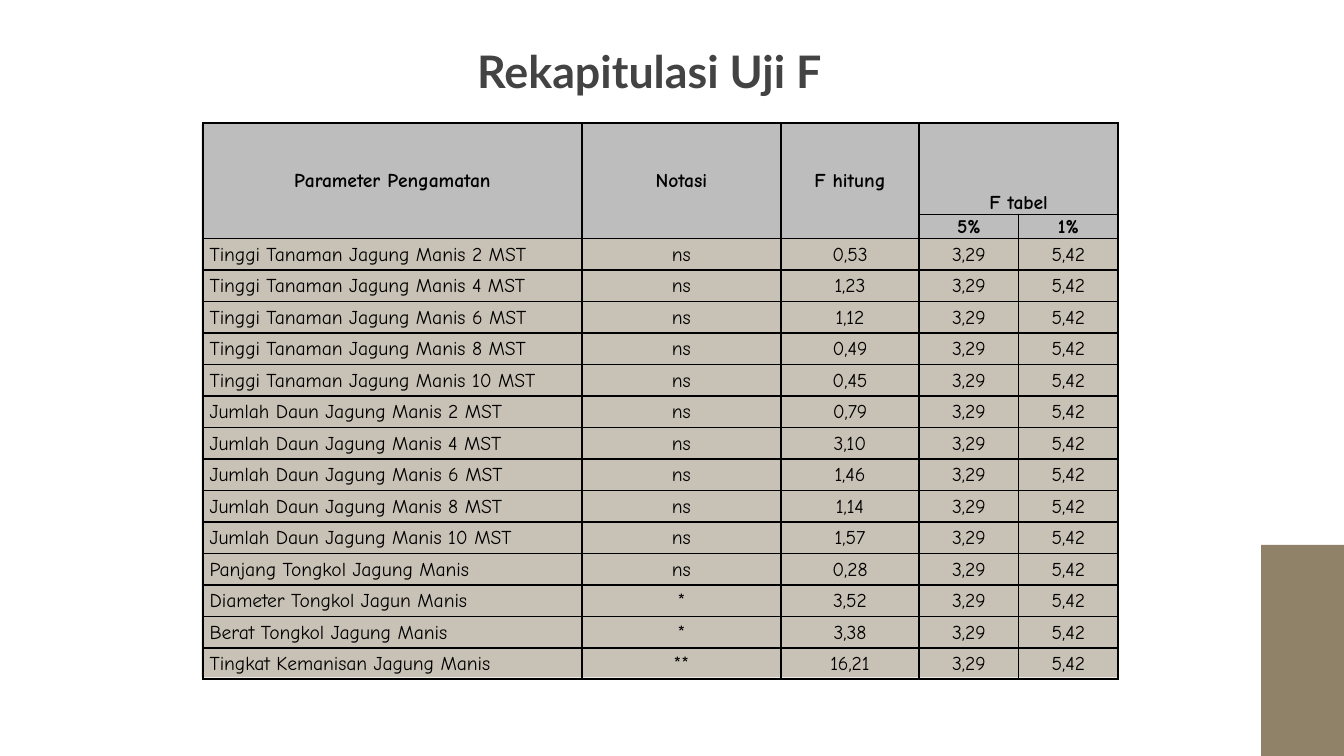
from lxml import etree
from pptx import Presentation, util as u
from pptx.dml.color import RGBColor
from pptx.enum import shapes, text
from pptx.oxml import ns

BLACK = RGBColor(0x00, 0x00, 0x00)
INK = RGBColor(0x43, 0x43, 0x43)
GREY = RGBColor(0xBD, 0xBD, 0xBD)
TAN = RGBColor(0x90, 0x82, 0x69)
MID = text.PP_ALIGN.CENTER
LEFT = text.PP_ALIGN.LEFT

HEADS = ["Parameter Pengamatan", "Notasi", "F hitung"]
LEVELS = {"5%": "3,29", "1%": "5,42"}
WEEKS = (2, 4, 6, 8, 10)
TRAITS = [f"{part} Jagung Manis {week} MST"
          for part in ("Tinggi Tanaman", "Jumlah Daun") for week in WEEKS]
TRAITS += ["Panjang Tongkol Jagung Manis", "Diameter Tongkol Jagun Manis",
           "Berat Tongkol Jagung Manis", "Tingkat Kemanisan Jagung Manis"]
MARKS = ["ns"] * 11 + ["*", "*", "**"]
SCORES = ["0,53", "1,23", "1,12", "0,49", "0,45", "0,79", "3,10", "1,46",
          "1,14", "1,57", "0,28", "3,52", "3,38", "16,21"]


class Deck:
    UNIT = u.Inches(0.1)
    HEAD = "Lato"
    BODY = "Comic Neue"

    def __init__(self, cols, rows):
        self.prs = Presentation()
        self.prs.slide_width = self.size(cols)
        self.prs.slide_height = self.size(rows)
        self.slide = self.prs.slides.add_slide(self.prs.slide_layouts[5])

    def size(self, count):
        return u.Emu(round(count * self.UNIT))

    def box(self, *spans):
        return [self.size(span) for span in spans]

    def run(self, para, words, font, points, color, bold):
        run = para.add_run()
        run.text = words
        run.font.name = font
        run.font.size = u.Pt(points)
        run.font.bold = bold
        run.font.color.rgb = color

    def title(self, words, *spans):
        shape = self.slide.shapes.title
        shape.left, shape.top, shape.width, shape.height = self.box(*spans)
        frame = shape.text_frame
        frame.auto_size = text.MSO_AUTO_SIZE.NONE
        frame.vertical_anchor = text.MSO_ANCHOR.TOP
        frame.margin_left = frame.margin_right = self.UNIT
        frame.margin_top = frame.margin_bottom = self.UNIT
        para = frame.paragraphs[0]
        para.alignment = LEFT
        self.run(para, words, self.HEAD, 24, INK, True)

    def block(self, color, *spans, alpha=None):
        shape = self.slide.shapes.add_shape(
            shapes.MSO_SHAPE.RECTANGLE, *self.box(*spans))
        shape.shadow.inherit = False
        shape.fill.solid()
        shape.fill.fore_color.rgb = color
        shape.line.fill.background()
        if alpha is not None:
            tint = shape.fill._xPr.find(".//" + ns.qn("a:srgbClr"))
            etree.SubElement(tint, ns.qn("a:alpha"), val=str(alpha * 1000))

    def table(self, left, top, widths, heights):
        frame = self.slide.shapes.add_table(
            len(heights), len(widths),
            *self.box(left, top, sum(widths), sum(heights)))
        grid = frame.table
        for col, width in zip(grid.columns, widths):
            col.width = self.size(width)
        for row, height in zip(grid.rows, heights):
            row.height = self.size(height)
        for cell in grid.iter_cells():
            self.edge(cell)
            cell.fill.background()
        return grid

    def edge(self, cell):
        props = cell._tc.get_or_add_tcPr()
        for side in ("lnL", "lnR", "lnT", "lnB"):
            line = etree.SubElement(props, ns.qn("a:" + side), w=str(u.Pt(1)))
            fill = etree.SubElement(line, ns.qn("a:solidFill"))
            etree.SubElement(fill, ns.qn("a:srgbClr"), val=str(BLACK))

    def cell(self, cell, words, align=MID, head=False,
             anchor=text.MSO_ANCHOR.MIDDLE):
        cell.margin_left = cell.margin_right = self.size(0.5)
        cell.margin_top = cell.margin_bottom = 0
        cell.vertical_anchor = anchor
        if head:
            cell.fill.solid()
            cell.fill.fore_color.rgb = GREY
        para = cell.text_frame.paragraphs[0]
        para.alignment = align
        para.line_spacing = 1.07
        self.run(para, words, self.BODY, 10.5, BLACK, head)


def main():
    deck = Deck(100, 56.25)
    deck.block(TAN, 15, 9.3, 68.1, 41.1, alpha=49)
    deck.title("Rekapitulasi Uji F", 34.5, 2.25, 30.9, 5.3)

    count = len(TRAITS)
    grid = deck.table(15.1, 9.15, [28.2, 14.8, 10.3, 7.4, 7.4],
                      [6.8, 1.8] + [32.8 / count] * count)
    for col, words in enumerate(HEADS):
        grid.cell(0, col).merge(grid.cell(1, col))
        deck.cell(grid.cell(0, col), words, head=True)
    grid.cell(0, 3).merge(grid.cell(0, 4))
    deck.cell(grid.cell(0, 3), "F tabel", head=True,
              anchor=text.MSO_ANCHOR.BOTTOM)
    for col, level in enumerate(LEVELS, 3):
        deck.cell(grid.cell(1, col), level, head=True)
    for row, facts in enumerate(zip(TRAITS, MARKS, SCORES), 2):
        for col, words in enumerate([*facts, *LEVELS.values()]):
            deck.cell(grid.cell(row, col), words, MID if col else LEFT)

    deck.block(TAN, 93.83, 40.55, 6.17, 15.7)
    deck.prs.save("out.pptx")


if __name__ == "__main__":
    main()
